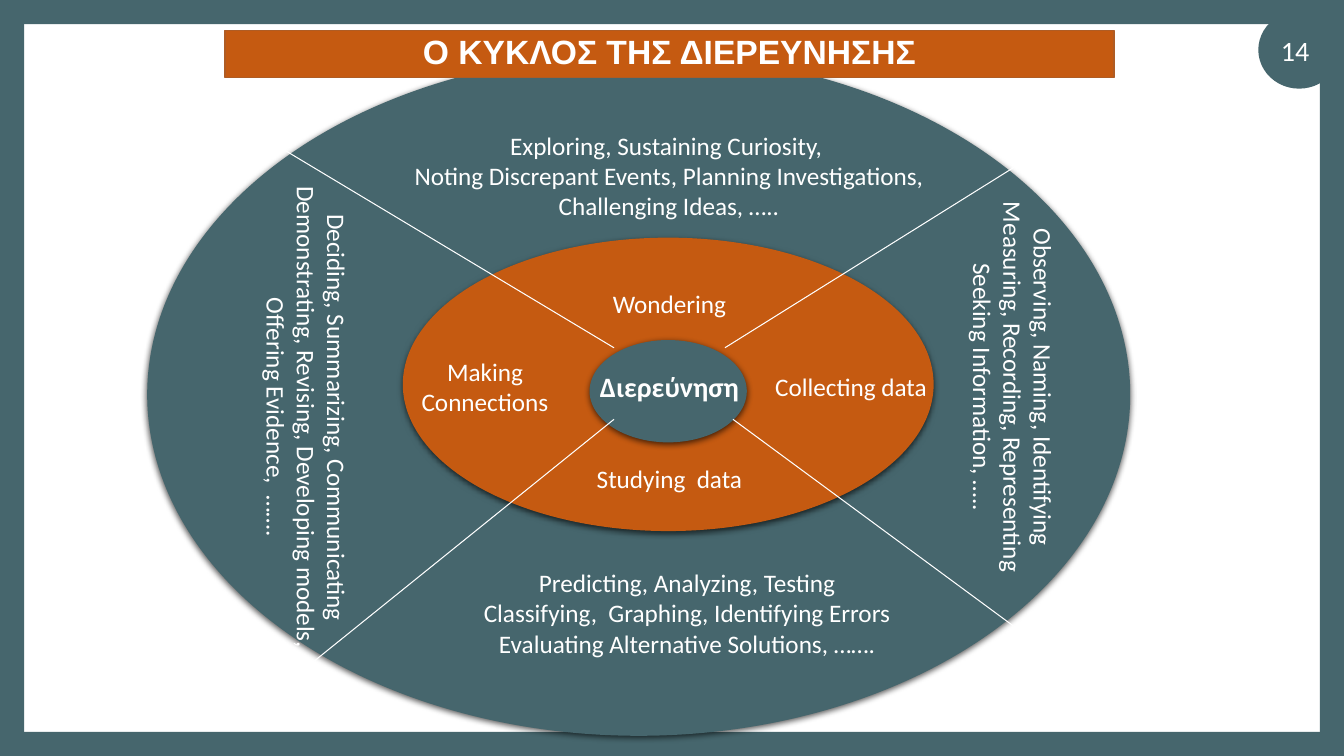
from lxml.etree import SubElement
from pptx import Presentation
from pptx.dml.color import RGBColor
from pptx.enum.shapes import MSO_CONNECTOR as Connector, MSO_SHAPE as Shape
from pptx.enum.text import MSO_ANCHOR as Anchor, MSO_AUTO_SIZE as AutoSize, PP_ALIGN as Align
from pptx.oxml.ns import qn
from pptx.util import Inches, Pt

WIDTH, HEIGHT = 13.33, 7.5
BORDER = 0.24
TEAL, ORANGE, RUST, WHITE = "46666D", "C55A11", "AF5C24", "FFFFFF"


def color(value):
    return RGBColor.from_string(value)


def inches(*lengths):
    return [Inches(length) for length in lengths]


def write(frame, text, size=18, font="Calibri", bold=False, spacing=1.0):
    """Fill a text frame with centred white lines."""
    frame.word_wrap = True
    frame.auto_size = AutoSize.NONE
    frame.vertical_anchor = Anchor.MIDDLE
    for index, line in enumerate(text.split("\n")):
        para = frame.paragraphs[0] if index == 0 else frame.add_paragraph()
        para.alignment = Align.CENTER
        para.line_spacing = spacing
        span = para.add_run()
        span.text = line
        span.font.size = Pt(size)
        span.font.name = font
        span.font.bold = bold
        span.font.color.rgb = color(WHITE)


def add_label(page, box, text, turn=0, **style):
    label = page.shapes.add_textbox(*inches(*box))
    label.rotation = turn
    write(label.text_frame, text, **style)


def add_solid(page, kind, box, fill):
    solid = page.shapes.add_shape(kind, *inches(*box))
    solid.shadow.inherit = False
    solid.fill.solid()
    solid.fill.fore_color.rgb = color(fill)
    solid.line.fill.background()
    return solid


def add_soft_shadow(shape):
    effects = shape.element.spPr.find(qn("a:effectLst"))
    shadow = SubElement(effects, qn("a:outerShdw"), blurRad=str(Pt(4.5)),
                        dist=str(Pt(1.5)), dir="5400000", algn="t", rotWithShape="0")
    tint = SubElement(shadow, qn("a:srgbClr"), val="000000")
    SubElement(tint, qn("a:alpha"), val="63000")


def add_frame(page, box, number):
    """Border around the page with the number in its corner disc."""
    left, top, width, height = box
    right, bottom = left + width, top + height
    add_solid(page, Shape.OVAL, (right - 0.85, top + 0.11, 0.81, 0.77), TEAL)
    for bar in ((left, top, width, BORDER),
                (left, bottom - BORDER, width, BORDER),
                (left, top, BORDER, height),
                (right - BORDER, top, BORDER, height)):
        add_solid(page, Shape.RECTANGLE, bar, TEAL)
    add_label(page, (right - 0.89, top + 0.3, 0.81, 0.4), number, size=20)


def add_rings(page, box):
    """Nested ellipses, each given as shares of the outer one."""
    left, top, width, height = box
    for x, y, wide, high, fill in ((0, 0, 1, 1, TEAL),
                                   (0.26, 0.27, 0.54, 0.43, ORANGE),
                                   (0.45, 0.42, 0.16, 0.15, TEAL)):
        ring = add_solid(page, Shape.OVAL, (left + x * width, top + y * height,
                                            wide * width, high * height), fill)
        add_soft_shadow(ring)


def add_title(page, box, text):
    title = page.shapes.title
    title.left, title.top, title.width, title.height = inches(*box)
    title.fill.solid()
    title.fill.fore_color.rgb = color(ORANGE)
    title.line.color.rgb = color(RUST)
    title.line.width = Pt(1)
    write(title.text_frame, text, size=24, font="Arial", bold=True, spacing=0.9)
    # Bring the banner in front of the rings
    title.element.getparent().append(title.element)


def add_stages(page, box):
    """Names of the four stages around the centre of the box."""
    left, top, width, height = box
    middle_x, middle_y = left + width / 2, top + height / 2
    for across, down, wide, high, text, style in (
            (0, 0, 1.77, 0.43, "Διερεύνηση", {"size": 20, "bold": True}),
            (0, -0.82, 1.85, 0.4, "Wondering", {}),
            (1.8, 0, 1.85, 0.4, "Collecting data", {}),
            (0, 0.91, 1.85, 0.4, "Studying  data", {}),
            (-1.83, 0, 1.85, 0.7, "Making\nConnections", {})):
        add_label(page, (middle_x + across - wide / 2, middle_y + down - high / 2,
                         wide, high), text, **style)


def add_dividers(page, box):
    """Lines from the centre ellipse out to the rim, relative to the box."""
    left, top = box[:2]
    for start_x, start_y, end_x, end_y in ((5.73, 2.92, 9.27, 0.71),
                                           (5.81, 3.63, 9.12, 6.07),
                                           (4.63, 3.63, 1.32, 6.3),
                                           (4.63, 2.92, 1.08, 0.79)):
        divider = page.shapes.add_connector(
            Connector.STRAIGHT,
            *inches(left + start_x, top + start_y, left + end_x, top + end_y))
        divider.line.color.rgb = color(WHITE)
        divider.line.width = Pt(0.75)
        SubElement(divider.element.spPr, qn("a:effectLst"))


def add_skills(page, box):
    """Skills of each stage; those at the sides are turned."""
    left, top = box[:2]
    for x, y, wide, turn, text in (
            (2.48, 0.71, 5.39, 0,
             "Exploring, Sustaining Curiosity, \n"
             "Noting Discrepant Events, Planning Investigations,\n"
             "Challenging Ideas, ….."),
            (6.19, 2.81, 4.8, 90,
             "Observing, Naming, Identifying\n"
             "Measuring, Recording, Representing\n"
             "Seeking Information, ….."),
            (2.66, 5.05, 5.39, 0,
             "Predicting, Analyzing, Testing\n"
             "Classifying,  Graphing, Identifying Errors\n"
             "Evaluating Alternative Solutions, ……."),
            (-1, 3.11, 5.17, 90,
             "Deciding, Summarizing, Communicating\n"
             "Demonstrating, Revising, Developing models,\n"
             "Offering Evidence,  …….")):
        add_label(page, (left + x, top + y, wide, 1), text, turn)


def main():
    deck = Presentation()
    deck.slide_width, deck.slide_height = inches(WIDTH, HEIGHT)
    page = deck.slides.add_slide(deck.slide_layouts[5])
    page.background.fill.solid()
    page.background.fill.fore_color.rgb = color(WHITE)

    wheel = (1.46, 0.53, 9.75, 6.77)
    add_frame(page, (0, 0, WIDTH, HEIGHT), "14")
    add_rings(page, wheel)
    add_title(page, (2.23, 0.3, 8.82, 0.47), "Ο ΚΥΚΛΟΣ ΤΗΣ ΔΙΕΡΕΥΝΗΣΗΣ")
    add_stages(page, (4, 2.38, 5.28, 2.91))
    add_dividers(page, wheel)
    add_skills(page, wheel)
    deck.save("out.pptx")


if __name__ == "__main__":
    main()
